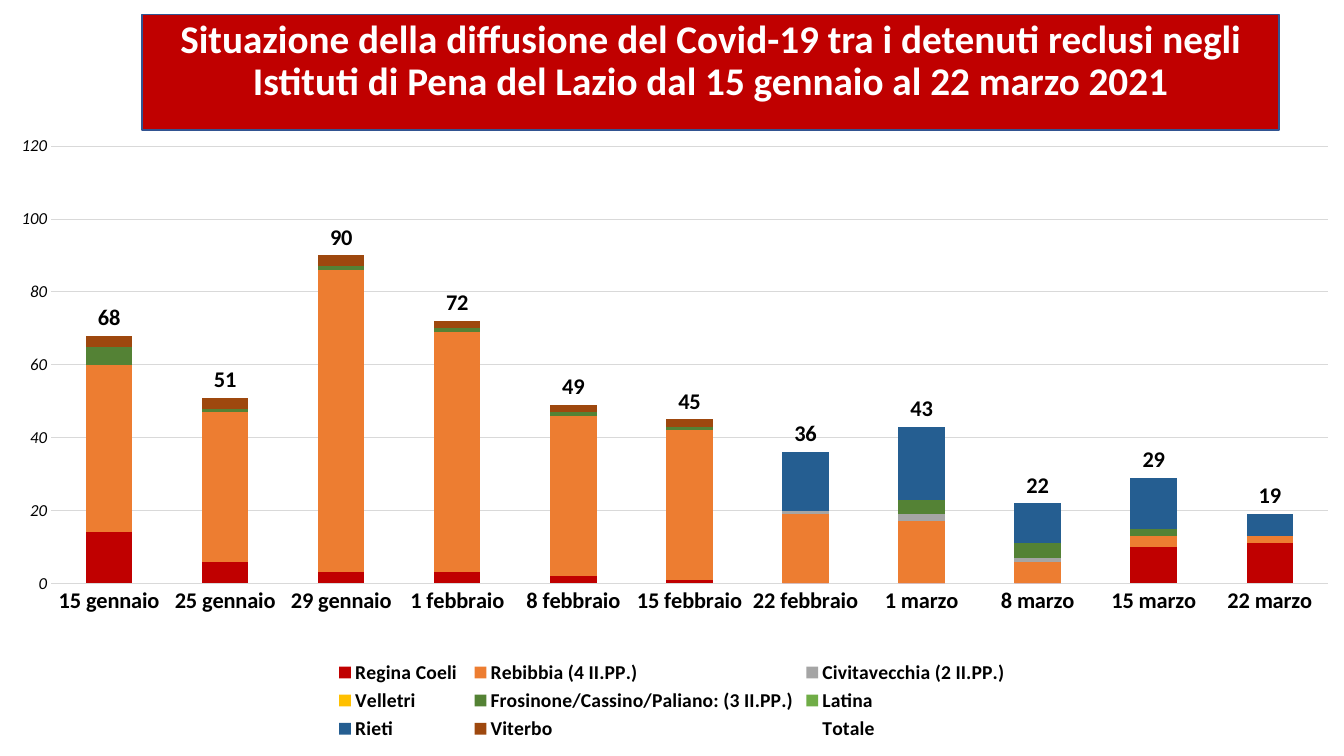
from lxml import etree
from pptx import Presentation
from pptx.chart.data import CategoryChartData
from pptx.dml.color import RGBColor
from pptx.enum.chart import XL_CHART_TYPE, XL_LABEL_POSITION, XL_LEGEND_POSITION, XL_TICK_MARK
from pptx.enum.text import MSO_ANCHOR, MSO_AUTO_SIZE, PP_ALIGN
from pptx.oxml.ns import qn
from pptx.util import Cm, Pt

STACKED = XL_CHART_TYPE.COLUMN_STACKED
INSIDE_BASE = XL_LABEL_POSITION.INSIDE_BASE
BOTTOM = XL_LEGEND_POSITION.BOTTOM
NO_TICK = XL_TICK_MARK.NONE
TOP = MSO_ANCHOR.TOP
NO_FIT = MSO_AUTO_SIZE.NONE
CENTER = PP_ALIGN.CENTER

RED = RGBColor(0xC0, 0x00, 0x00)
ORANGE = RGBColor(0xED, 0x7D, 0x31)
GRAY = RGBColor(0xA5, 0xA5, 0xA5)
YELLOW = RGBColor(0xFF, 0xC0, 0x00)
DARK_GREEN = RGBColor(0x54, 0x82, 0x35)
GREEN = RGBColor(0x70, 0xAD, 0x47)
BLUE = RGBColor(0x25, 0x5E, 0x91)
BROWN = RGBColor(0x9E, 0x48, 0x0E)
BORDER = RGBColor(0x32, 0x54, 0x91)
GRID = RGBColor(0xD9, 0xD9, 0xD9)
BLACK = RGBColor(0, 0, 0)
WHITE = RGBColor(0xFF, 0xFF, 0xFF)

TITLE = ("Situazione della diffusione del Covid-19 tra i detenuti reclusi negli "
         "Istituti di Pena del Lazio dal 15 gennaio al 22 marzo 2021")
DATES = ["15 gennaio", "25 gennaio", "29 gennaio", "1 febbraio", "8 febbraio", "15 febbraio",
         "22 febbraio", "1 marzo", "8 marzo", "15 marzo", "22 marzo"]
PRISONS = [
    ("Regina Coeli ", RED, [14, 6, 3, 3, 2, 1, 0, 0, 0, 10, 11]),
    ("Rebibbia (4 II.PP.)", ORANGE, [46, 41, 83, 66, 44, 41, 19, 17, 6, 3, 2]),
    ("Civitavecchia (2 II.PP.)", GRAY, [0, 0, 0, 0, 0, 0, 1, 2, 1, 0, 0]),
    ("Velletri", YELLOW, [0] * len(DATES)),
    ("Frosinone/Cassino/Paliano: (3 II.PP.)", DARK_GREEN, [5, 1, 1, 1, 1, 1, 0, 4, 4, 2, 0]),
    ("Latina", GREEN, [0] * len(DATES)),
    ("Rieti", BLUE, [0, 0, 0, 0, 0, 0, 16, 20, 11, 14, 6]),
    ("Viterbo", BROWN, [3, 3, 3, 2, 2, 2, 0, 0, 0, 0, 0]),
]
TOTALS = [sum(day) for day in zip(*(values for _, _, values in PRISONS))]
PLOT_AREA = {"x": 0.038, "y": 0.028, "w": 0.95, "h": 0.71}


def format_font(font, size, color=BLACK, bold=True, italic=False):
    """Apply the slide's typeface with the given size, colour and style."""
    font.name = "Calibri"
    font.size = Pt(size)
    font.color.rgb = color
    font.bold = bold
    font.italic = italic


def write_text(tf, text, **style):
    """Write one centred paragraph in the given font style."""
    p = tf.paragraphs[0]
    p.alignment = CENTER
    p.line_spacing = 0.9
    p.space_before = Pt(10)
    r = p.add_run()
    r.text = text
    format_font(r.font, **style)


def add_title(slide):
    """Place the red title banner."""
    sp = slide.shapes.title
    sp.left, sp.top, sp.width, sp.height = Cm(3.58), Cm(0.36), Cm(28.65), Cm(2.92)
    sp.fill.solid()
    sp.fill.fore_color.rgb = RED
    sp.line.color.rgb = BORDER
    sp.line.width = Pt(1)
    tf = sp.text_frame
    tf.word_wrap = True
    tf.auto_size = NO_FIT
    tf.vertical_anchor = TOP
    write_text(tf, TITLE, size=28, color=WHITE)


def set_plot_area(chart):
    """Fix the inner plot area as fractions of the chart."""
    plot_area = chart.plots[0]._element.getparent()
    layout = plot_area.find(qn("c:layout"))
    if layout is None:
        layout = etree.Element(qn("c:layout"))
        plot_area.insert(0, layout)
    manual = etree.SubElement(layout, qn("c:manualLayout"))
    settings = {"layoutTarget": "inner", "xMode": "edge", "yMode": "edge", **PLOT_AREA}
    for tag, value in settings.items():
        etree.SubElement(manual, qn(f"c:{tag}")).set("val", str(value))


def format_axes(chart):
    """Style both axes and the gridlines."""
    dates, counts = chart.category_axis, chart.value_axis
    for axis in (dates, counts):
        axis.major_tick_mark = axis.minor_tick_mark = NO_TICK
    format_font(dates.tick_labels.font, 16)
    format_font(counts.tick_labels.font, 12, bold=False, italic=True)
    counts.minimum_scale, counts.maximum_scale, counts.major_unit = 0, 120, 20
    counts.format.line.fill.background()
    for line in (dates.format.line, counts.major_gridlines.format.line):
        line.color.rgb = GRID
        line.width = Pt(0.75)


def add_cases_chart(slide):
    """Add the stacked columns, with an invisible series carrying the totals."""
    data = CategoryChartData()
    data.categories = DATES
    for name, _, values in PRISONS:
        data.add_series(name, values)
    data.add_series("Totale", TOTALS)
    chart = slide.shapes.add_chart(STACKED, Cm(0), Cm(3.25), Cm(33.87), Cm(15.52), data).chart
    chart.has_title = False
    format_font(chart.font, 16)
    set_plot_area(chart)
    format_axes(chart)

    plot = chart.plots[0]
    plot.gap_width, plot.overlap = 150, 100
    *prisons, total = plot.series
    for s, (_, color, _) in zip(prisons, PRISONS):
        s.format.fill.solid()
        s.format.fill.fore_color.rgb = color
    total.format.fill.background()
    labels = total.data_labels
    labels.show_value = True
    labels.position = INSIDE_BASE
    format_font(labels.font, 16)

    chart.has_legend = True
    chart.legend.position = BOTTOM
    chart.legend.include_in_layout = False
    format_font(chart.legend.font, 14)


def main():
    """Build the slide and save it."""
    prs = Presentation()
    prs.slide_width, prs.slide_height = Cm(33.87), Cm(19.05)
    slide = prs.slides.add_slide(prs.slide_layouts[5])
    add_title(slide)
    add_cases_chart(slide)
    prs.save("out.pptx")


if __name__ == "__main__":
    main()
